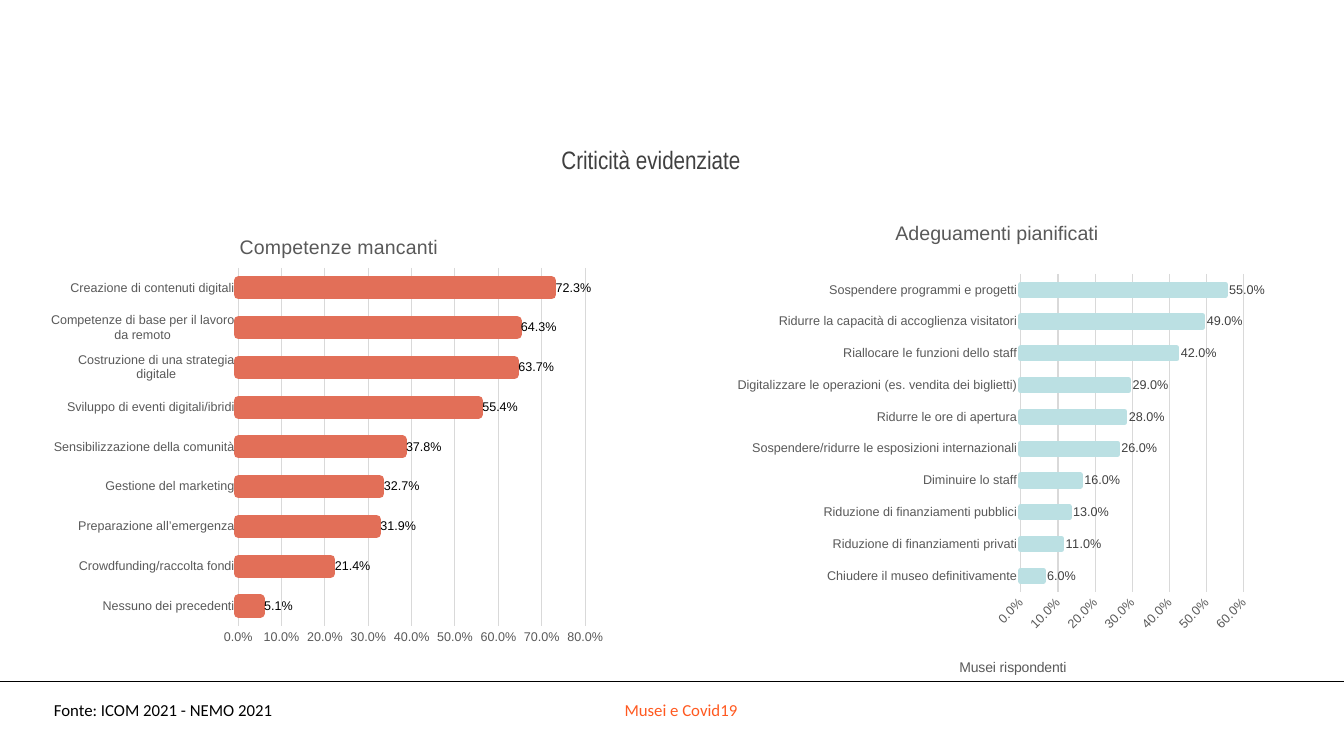
"""Build the slide on museum difficulties during Covid19."""
from pptx import Presentation
from pptx.chart.data import CategoryChartData
from pptx.dml.color import RGBColor
from pptx.enum.chart import XL_CHART_TYPE, XL_LABEL_POSITION, XL_TICK_MARK
from pptx.enum.shapes import MSO_CONNECTOR, MSO_SHAPE
from pptx.enum.text import MSO_ANCHOR, MSO_AUTO_SIZE, PP_ALIGN
from pptx.oxml import parse_xml
from pptx.oxml.ns import nsdecls, qn
from pptx.util import Emu, Pt
from lxml import etree

SCALE = 12192000 / 1344
GREY, PALE = "595959", "D9D9D9"

HEADS = [
    ("Criticità evidenziate", (455, 139, 392, 40), "Arial Narrow", 18, "404040"),
    ("Adeguamenti pianificati", (801, 216, 392, 34), "Arial", 14, GREY),
]
FEET = [
    ("Musei e Covid19", (44, 695, 1274, 40), "FF5920", PP_ALIGN.CENTER, MSO_ANCHOR.TOP),
    ("Fonte: ICOM 2021 - NEMO 2021", (44, 695, 255, 30), "000000", PP_ALIGN.LEFT, MSO_ANCHOR.MIDDLE),
]
SKILLS = [
    ("Nessuno dei precedenti", 0.051),
    ("Crowdfunding/raccolta fondi", 0.214),
    ("Preparazione all’emergenza", 0.319),
    ("Gestione del marketing", 0.327),
    ("Sensibilizzazione della comunità", 0.378),
    ("Sviluppo di eventi digitali/ibridi", 0.554),
    ("Costruzione di una strategia digitale", 0.637),
    ("Competenze di base per il lavoro da remoto", 0.643),
    ("Creazione di contenuti digitali", 0.723),
]
PLANS = [
    ("Chiudere il museo definitivamente", 0.06),
    ("Riduzione di finanziamenti privati", 0.11),
    ("Riduzione di finanziamenti pubblici", 0.13),
    ("Diminuire lo staff", 0.16),
    ("Sospendere/ridurre le esposizioni internazionali", 0.26),
    ("Ridurre le ore di apertura", 0.28),
    ("Digitalizzare le operazioni (es. vendita dei biglietti)", 0.29),
    ("Riallocare le funzioni dello staff", 0.42),
    ("Ridurre la capacità di accoglienza visitatori", 0.49),
    ("Sospendere programmi e progetti", 0.55),
]
CHARTS = [
    dict(rows=SKILLS, box=(51, 211, 562, 443), plot=(236, 268, 349, 358), top=0.8,
         fill="E26F58", edge=6.5, ink="000000"),
    dict(rows=PLANS, box=(731, 266, 534, 414), plot=(1021, 274, 223, 318), top=0.6,
         fill="BBE0E3", edge=3.5, ink="404040"),
]


def px(n):
    return Emu(round(n * SCALE))


def rgb(code):
    return RGBColor.from_string(code)


def style(font, name, size, color):
    font.name, font.size, font.bold = name, Pt(size), False
    font.color.rgb = rgb(color)


def write(shape, text, name, size, color, align, anchor):
    frame = shape.text_frame
    frame.word_wrap = True
    frame.vertical_anchor = anchor
    frame.text = text
    para = frame.paragraphs[0]
    para.alignment = align
    style(para.runs[0].font, name, size, color)


def place(node, index, box, spot):
    old = node.find(qn("c:layout"))
    if old is not None:
        node.remove(old)
    left, top, wide, high = box
    vals = [("x", (spot[0] - left) / wide), ("y", (spot[1] - top) / high)]
    modes = [("xMode", "edge"), ("yMode", "edge")]
    if len(spot) == 4:
        modes.insert(0, ("layoutTarget", "inner"))
        vals += [("w", spot[2] / wide), ("h", spot[3] / high)]
    body = "".join(f'<c:{tag} val="{val}"/>' for tag, val in modes)
    body += "".join(f'<c:{tag} val="{val:.4f}"/>' for tag, val in vals)
    node.insert(index, parse_xml(
        f'<c:layout {nsdecls("c")}><c:manualLayout>{body}</c:manualLayout></c:layout>'))


def caption(title, text, size, box, spot):
    title.text_frame.text = text
    style(title.text_frame.paragraphs[0].runs[0].font, "Arial", size, GREY)
    place(title.element, 1, box, spot)


def seek(chart, *tags):
    return chart.element.find(".//" + "/".join(map(qn, tags)))


def draw(slide, rows, box, plot, top, fill, edge, ink):
    data = CategoryChartData(number_format="0.0%")
    data.categories = [name for name, _ in rows]
    data.add_series("Series 1", [val for _, val in rows])
    chart = slide.shapes.add_chart(
        XL_CHART_TYPE.BAR_CLUSTERED, *map(px, box), data).chart
    chart.has_legend = chart.has_title = False
    style(chart.font, "Arial", 10, "000000")
    cat, val = chart.category_axis, chart.value_axis
    for axis in (cat, val):
        axis.major_tick_mark = axis.minor_tick_mark = XL_TICK_MARK.NONE
        style(axis.tick_labels.font, "Arial", 9, GREY)
    cat.has_major_gridlines = False
    val.has_major_gridlines = True
    val.minimum_scale, val.maximum_scale, val.major_unit = 0, top, 0.1
    val.tick_labels.number_format = "0.0%"
    val.tick_labels.number_format_is_linked = False
    val.format.line.fill.background()
    for line in (cat.format.line, val.major_gridlines.format.line):
        line.color.rgb, line.width = rgb(PALE), Pt(0.75)
    bars = chart.plots[0]
    bars.gap_width, bars.vary_by_categories = 182, False
    form = bars.series[0].format
    form.fill.solid()
    form.fill.fore_color.rgb = form.line.color.rgb = rgb(fill)
    form.line.width = Pt(edge)
    etree.SubElement(seek(chart, "c:ser", "c:spPr", "a:ln"), qn("a:round"))
    tags = bars.series[0].data_labels
    tags.show_value = True
    tags.position = XL_LABEL_POSITION.OUTSIDE_END
    tags.number_format, tags.number_format_is_linked = "0.0%", False
    style(tags.font, "Arial", 9, ink)
    place(seek(chart, "c:plotArea"), 0, box, plot)
    return chart


def main():
    deck = Presentation()
    deck.slide_width, deck.slide_height = px(1344), px(756)
    slide = deck.slides.add_slide(deck.slide_layouts[6])
    shapes = slide.shapes

    rule = shapes.add_connector(MSO_CONNECTOR.STRAIGHT, 0, px(681), px(1344), px(681))
    rule.line.color.rgb, rule.line.width = rgb("000000"), Pt(0.5)
    etree.SubElement(rule.element.spPr, qn("a:effectLst"))

    for text, box, color, align, anchor in FEET:
        foot = shapes.add_textbox(*map(px, box))
        write(foot, text, "Calibri", 12, color, align, anchor)

    skills, plans = [draw(slide, **item) for item in CHARTS]
    skills.has_title = True
    caption(skills.chart_title, "Competenze mancanti", 14, CHARTS[0]["box"], (234, 231))
    axis = plans.value_axis
    axis.has_title = True
    caption(axis.axis_title, "Musei rispondenti", 10, CHARTS[1]["box"], (957, 656))
    seek(plans, "c:valAx", "c:txPr", "a:bodyPr").set("rot", "-2700000")

    for text, box, name, size, color in HEADS:
        head = shapes.add_shape(MSO_SHAPE.RECTANGLE, *map(px, box))
        head.shadow.inherit = False
        head.fill.solid()
        head.fill.fore_color.rgb = rgb("FFFFFF")
        head.line.fill.background()
        write(head, text, name, size, color, PP_ALIGN.CENTER, MSO_ANCHOR.TOP)
        head.text_frame.auto_size = MSO_AUTO_SIZE.SHAPE_TO_FIT_TEXT

    deck.save("out.pptx")


if __name__ == "__main__":
    main()
